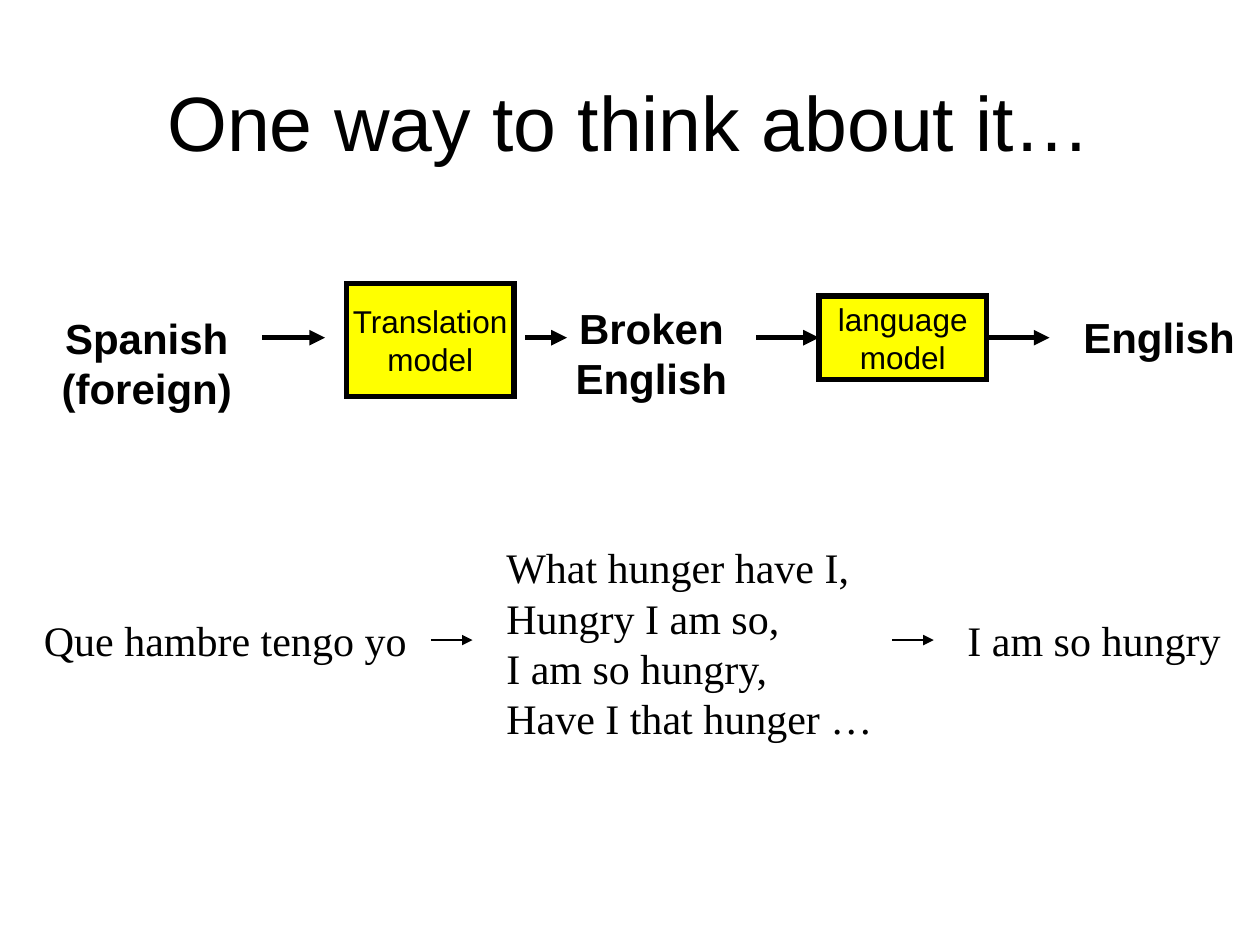
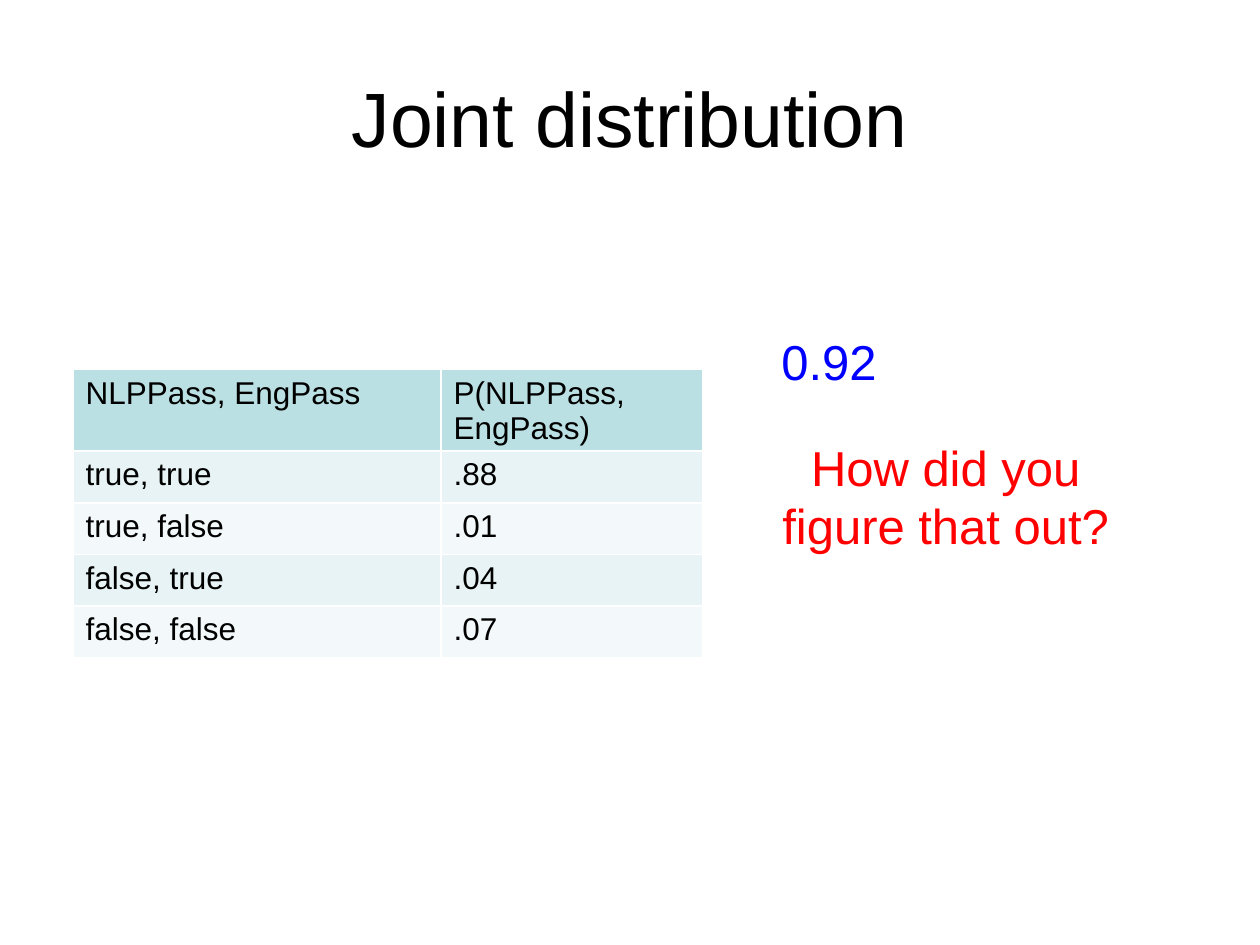
from lxml import etree
from pptx import Presentation
from pptx.dml.color import RGBColor
from pptx.enum.shapes import MSO_CONNECTOR, MSO_SHAPE
from pptx.enum.text import MSO_ANCHOR, MSO_AUTO_SIZE, PP_ALIGN
from pptx.oxml.ns import qn
from pptx.util import Inches, Pt

STRAIGHT, RECT = MSO_CONNECTOR.STRAIGHT, MSO_SHAPE.RECTANGLE
MIDDLE, TOP = MSO_ANCHOR.MIDDLE, MSO_ANCHOR.TOP
LEFT, CENTER = PP_ALIGN.LEFT, PP_ALIGN.CENTER
GROW = MSO_AUTO_SIZE.SHAPE_TO_FIT_TEXT

SANS, SERIF = "Arial", "Times New Roman"
COLORS = {
    "text": "000000", "white": "FFFFFF", "model": "FFFF00",
    "answer": "0000FF", "question": "FF0000",
    "header": "BBE0E3", "odd": "E7F3F4", "even": "F3F9FA",
}


def rgb(name):
    return RGBColor.from_string(COLORS[name])


def write(tf, text, size=18, font=SANS, color="text", bold=False,
          align=CENTER, anchor=TOP, wrap=True):
    """Newlines start paragraphs; vertical tabs break lines within one."""
    tf.word_wrap = wrap
    tf.vertical_anchor = anchor
    for i, line in enumerate(text.split("\n")):
        p = tf.add_paragraph() if i else tf.paragraphs[0]
        p.text = line
        p.alignment = align
        for r in p.runs:
            r.font.size = Pt(size)
            r.font.name = font
            r.font.bold = bold
            r.font.color.rgb = rgb(color)


def add_text(s, box, text, **fmt):
    tf = s.shapes.add_textbox(*map(Inches, box)).text_frame
    write(tf, text, **fmt)
    tf.auto_size = GROW


def add_title(s, box, text):
    sp = s.shapes.add_textbox(*map(Inches, box))
    write(sp.text_frame, text, size=44, anchor=MIDDLE)


def add_model(s, box, text):
    sp = s.shapes.add_shape(RECT, *map(Inches, box))
    sp.shadow.inherit = False
    sp.fill.solid()
    sp.fill.fore_color.rgb = rgb("model")
    sp.line.color.rgb = rgb("text")
    sp.line.width = Pt(3)
    etree.SubElement(sp.line._get_or_add_ln(), qn("a:miter"), lim="800000")
    write(sp.text_frame, text, anchor=MIDDLE, wrap=False)
    return sp


def add_arrow(s, x1, x2, y, width):
    cxn = s.shapes.add_connector(STRAIGHT, *map(Inches, (x1, y, x2, y)))
    cxn.line.color.rgb = rgb("text")
    cxn.line.width = Pt(width)
    ln = cxn.line._get_or_add_ln()
    etree.SubElement(ln, qn("a:tailEnd"), type="triangle")
    etree.SubElement(ln.getparent(), qn("a:effectLst"))
    return cxn


def add_pipeline(s, x, y):
    """Model chain, placed from its left edge and the top of its tallest box."""
    labels = [
        ((x, y + 0.18, 1.57, 0.91), "Spanish\v(foreign)"),
        ((x + 4.04, y + 0.1, 1.5, 0.9), "Broken\nEnglish"),
        ((x + 8.07, y + 0.17, 1.5, 0.5), "English"),
    ]
    for box, text in labels:
        add_text(s, box, text, size=24, bold=True, wrap=False)
    add_model(s, (x + 2.37, y, 1.33, 0.9), "Translation\vmodel")
    language = add_model(s, (x + 6.12, y + 0.1, 1.33, 0.66), "language\vmodel")
    mid = y + 0.43
    add_arrow(s, x + 1.7, x + 2.2, mid, 3)
    add_arrow(s, x + 3.79, x + 4.12, mid, 3)
    add_arrow(s, x + 5.62, x + 6.12, mid, 3).end_connect(language, 1)
    add_arrow(s, x + 7.45, x + 7.95, mid, 3).begin_connect(language, 3)


def add_example(s, x, y):
    """Sample sentence on its way through the chain."""
    steps = [
        ((x, y + 0.58, 3.08, 0.5), "Que hambre tengo yo"),
        ((x + 3.67, y, 3.11, 1.7),
         "What hunger have I,\nHungry I am so,\nI am so hungry,\n"
         "Have I that hunger …"),
        ((x + 7.33, y + 0.58, 2.21, 0.5), "I am so hungry"),
    ]
    for box, text in steps:
        add_text(s, box, text, size=24, font=SERIF, align=LEFT, wrap=False)
    for start in (x + 3.17, x + 6.83):
        add_arrow(s, start, start + 0.33, y + 0.83, 0.75)


def set_borders(cell, color, width):
    tc_pr = cell._tc.get_or_add_tcPr()
    for i, side in enumerate(("a:lnL", "a:lnR", "a:lnT", "a:lnB")):
        ln = etree.Element(qn(side), w=str(Pt(width)))
        fill = etree.SubElement(ln, qn("a:solidFill"))
        etree.SubElement(fill, qn("a:srgbClr"), val=COLORS[color])
        tc_pr.insert(i, ln)


def add_joint_table(s, x, y):
    rows = [
        ("NLPPass, EngPass", "P(NLPPass, EngPass)"),
        ("true, true", ".88"),
        ("true, false", ".01"),
        ("false, true", ".04"),
        ("false, false", ".07"),
    ]
    widths, heights = (2.92, 2.08), (0.65, 0.41, 0.41, 0.41, 0.41)
    box = (x, y, sum(widths), sum(heights))
    table = s.shapes.add_table(len(rows), len(widths), *map(Inches, box)).table
    for col, width in zip(table.columns, widths):
        col.width = Inches(width)
    for i, (row, height) in enumerate(zip(rows, heights)):
        table.rows[i].height = Inches(height)
        fill = "header" if i == 0 else "odd" if i % 2 else "even"
        for j, text in enumerate(row):
            cell = table.cell(i, j)
            cell.margin_bottom = Inches(0.05 if i else 0)
            cell.fill.solid()
            cell.fill.fore_color.rgb = rgb(fill)
            write(cell.text_frame, text, align=LEFT)
            set_borders(cell, "white", 1)


def translation_slide(s):
    add_title(s, (0.75, 0.33, 8.5, 1.25), "One way to think about it…")
    add_pipeline(s, 0.38, 2.25)
    add_example(s, 0.25, 4.25)


def distribution_slide(s):
    add_title(s, (0.5, 0.3, 9, 1.25), "Joint distribution")
    add_joint_table(s, 0.58, 2.93)
    add_text(s, (5.92, 3.42, 3.17, 1.04), "How did you figure that out?",
             size=28, color="question")
    add_text(s, (6.08, 2.58, 1, 0.57), "0.92", size=28, color="answer")


def main():
    prs = Presentation()
    prs.slide_width, prs.slide_height = Inches(10), Inches(7.5)
    for build in (translation_slide, distribution_slide):
        build(prs.slides.add_slide(prs.slide_layouts[6]))
    prs.save("out.pptx")


if __name__ == "__main__":
    main()
